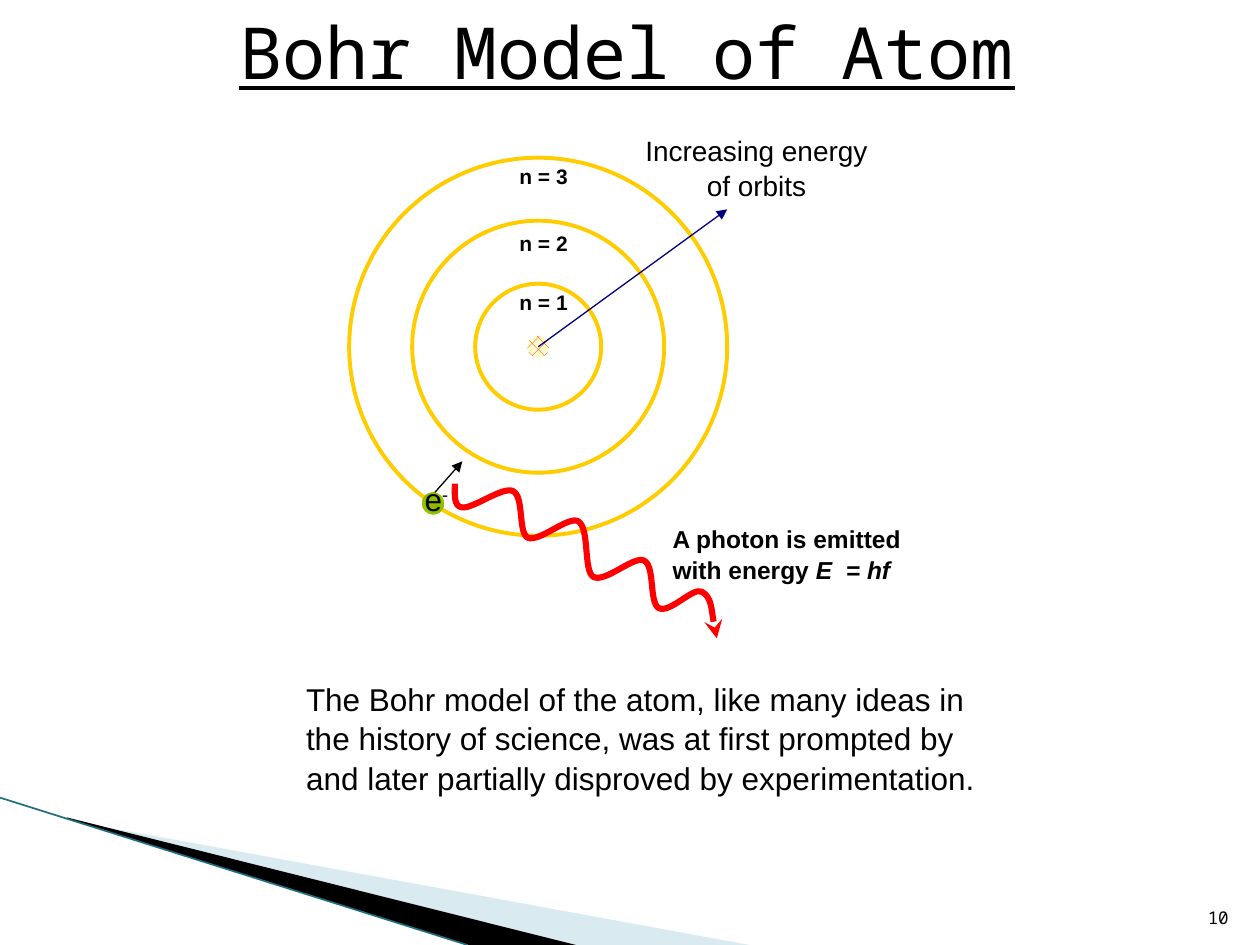
from copy import deepcopy

from lxml.etree import SubElement
from pptx import Presentation
from pptx.dml.color import RGBColor
from pptx.enum.dml import MSO_PATTERN
from pptx.enum.shapes import MSO_CONNECTOR, MSO_SHAPE
from pptx.enum.text import MSO_ANCHOR as Anchor, MSO_AUTO_SIZE as AutoSize, PP_ALIGN as Align
from pptx.oxml.ns import qn
from pptx.util import Cm, Pt

COLORS = {
    "ink": "000000",
    "pale": "A0CBDC",
    "edge": "1F6F80",
    "orbit": "FFCC00",
    "nucleus_dots": "FF0000",
    "nucleus": "FFFFCC",
    "energy": "000080",
    "electron": "99CC00",
    "electron_core": "8BBA00",
    "photon": "FF0000",
}
WAVE = [
    (0, 0.23), (-0.03, 0.46), (0.15, 0.48),
    (0.36, 0.51), (0.97, 0.05), (1.17, 0.15),
    (1.4, 0.25), (1.27, 0.99), (1.47, 1.09),
    (1.7, 1.19), (2.29, 0.64), (2.49, 0.76),
    (2.72, 0.91), (2.59, 1.75), (2.79, 1.88),
    (3.02, 2.01), (3.61, 1.45), (3.81, 1.55),
    (4.04, 1.65), (3.91, 2.39), (4.11, 2.51),
    (4.34, 2.62), (4.8, 2.08), (4.98, 2.18),
    (5.18, 2.29), (5.23, 2.97), (5.28, 3.12),
]


def color(name):
    return RGBColor.from_string(COLORS[name])


def style_span(span, size, font="Arial", bold=None):
    span.font.size = Pt(size)
    span.font.name = font
    span.font.bold = bold
    span.font.color.rgb = color("ink")


def add_text(page, box, lines, size, font="Arial", bold=None, align=Align.LEFT,
             anchor=Anchor.TOP, wrap=True, grow=True):
    label = page.shapes.add_textbox(*map(Cm, box))
    frame = label.text_frame
    frame.text = "\n".join(lines)
    frame.word_wrap = wrap
    frame.auto_size = AutoSize.SHAPE_TO_FIT_TEXT if grow else AutoSize.NONE
    frame.vertical_anchor = anchor
    for para in frame.paragraphs:
        para.alignment = align
        if len(lines) > 1:
            para.line_spacing = 1.05
        for span in para.runs:
            style_span(span, size, font, bold)
    return frame


def add_circle(page, center_x, center_y, radius):
    circle = page.shapes.add_shape(
        MSO_SHAPE.OVAL, Cm(center_x - radius), Cm(center_y - radius),
        Cm(2 * radius), Cm(2 * radius))
    circle.shadow.inherit = False
    return circle


def add_arrowhead(line_shape, kind):
    SubElement(line_shape.line._get_or_add_ln(), qn("a:tailEnd"), type=kind)


def add_line(page, start, end, name, width):
    line = page.shapes.add_connector(MSO_CONNECTOR.STRAIGHT, *map(Cm, (*start, *end)))
    line.line.color.rgb = color(name)
    line.line.width = Pt(width)
    SubElement(line._element.spPr, qn("a:effectLst"))
    return line


def add_outline(page, left, top, points, close):
    spots = [(Cm(left + x), Cm(top + y)) for x, y in points]
    builder = page.shapes.build_freeform(*spots[0])
    builder.add_line_segments(spots[1:], close=close)
    outline = builder.convert_to_shape()
    outline.shadow.inherit = False
    return outline


def draw_backdrop(page, left, top):
    wedges = [
        ("pale", [(1.4, 0.46), (15.11, 2.97), (11.58, 2.97), (1.4, 0.43)]),
        ("ink", [(1.35, 0.4), (11.61, 2.97), (9.45, 2.97), (1.37, 0.43)]),
    ]
    for name, points in wedges:
        wedge = add_outline(page, left, top, points, True)
        wedge.fill.solid()
        wedge.fill.fore_color.rgb = color(name)
        wedge.line.fill.background()
        if name == "pale":
            tint = wedge._element.spPr.find(qn("a:solidFill"))[0]
            SubElement(tint, qn("a:alpha"), val="40000")
    add_line(page, (left, top), (left + 9.42, top + 2.97), "edge", 0.95)


def draw_title(page, box):
    frame = add_text(page, box, ["Bohr Model of Atom"], 41, "Noto Sans Mono",
                     align=Align.CENTER, anchor=Anchor.MIDDLE, grow=False)
    frame.paragraphs[0].runs[0].font.underline = True


def draw_electron(page, center_x, center_y):
    electron = add_circle(page, center_x, center_y, 0.22)
    electron.line.fill.background()
    electron.fill.gradient()
    electron.fill.gradient_angle = 45
    first, last = electron.fill.gradient_stops
    first.color.rgb = last.color.rgb = color("electron_core")
    first.position, last.position = 0.5, 1
    stops = electron._element.spPr.find(qn("a:gradFill")).find(qn("a:gsLst"))
    last.color.rgb = color("electron")
    start = deepcopy(stops[1])
    start.set("pos", "0")
    stops.insert(0, start)


def draw_atom(page, left, top, size):
    center_x, center_y = left + size / 2, top + size / 2
    for level in (1, 2, 3):
        orbit = add_circle(page, center_x, center_y, level * size / 6)
        orbit.fill.background()
        orbit.line.color.rgb = color("orbit")
        orbit.line.width = Pt(2.25)

    nucleus = add_circle(page, center_x, center_y, 0.22)
    nucleus.fill.patterned()
    nucleus.fill.pattern = MSO_PATTERN.PERCENT_30
    nucleus.fill.fore_color.rgb = color("nucleus_dots")
    nucleus.fill.back_color.rgb = color("nucleus")
    nucleus.line.fill.background()

    energy = add_line(page, (center_x, center_y), (center_x + 3.81, center_y - 2.77),
                      "energy", 0.75)
    add_arrowhead(energy, "triangle")
    add_text(page, (left + 5.71, top - 0.64, 5, 1.63), ["Increasing energy", "of orbits"],
             16, align=Align.CENTER, wrap=False)
    for level, offset in ((1, 2.54), (2, 1.34), (3, 0)):
        add_text(page, (left + 3.18, top + offset, 1.5, 0.76), [f"n = {level}"],
                 12, bold=True, wrap=False)

    jump = add_line(page, (left + 1.52, top + 6.98), (left + 2.28, top + 6.12), "ink", 0.75)
    add_arrowhead(jump, "triangle")
    draw_electron(page, left + 1.69, top + 6.97)
    frame = add_text(page, (left + 1.27, top + 6.37, 1.02, 1.02), ["e"], 18, wrap=False)
    charge = frame.paragraphs[0].add_run()
    charge.text = "-"
    style_span(charge, 18)
    charge.font._element.set("baseline", "30000")


def draw_photon(page, left, top):
    wave = add_outline(page, left, top, [(0, 0), *WAVE], False)
    wave.fill.background()
    wave.line.color.rgb = color("photon")
    wave.line.width = Pt(3.5)
    add_arrowhead(wave, "stealth")
    segments = list(wave._element.spPr.iter(qn("a:lnTo")))
    for index in range(0, len(segments), 3):
        curve = SubElement(segments[index].getparent(), qn("a:cubicBezTo"))
        for segment in segments[index:index + 3]:
            curve.append(segment[0])
            segment.getparent().remove(segment)

    frame = add_text(page, (left + 4.14, top + 0.66, 5.13, 1.45),
                     ["A photon is emitted", "with energy "], 14, bold=True, wrap=False)
    formula = frame.paragraphs[1].add_run()
    formula.text = "E  = hf"
    style_span(formula, 14, bold=True)
    formula.font.italic = True


def draw_caption(page, box):
    add_text(page, box, ["The Bohr model of the atom, like many ideas in",
                         "the history of science, was at first prompted by",
                         "and later partially disproved by experimentation."], 18)


def draw_page_number(page, box):
    add_text(page, box, ["10"], 10, "Noto Sans Mono", align=Align.RIGHT,
             anchor=Anchor.BOTTOM, grow=False)


def main():
    deck = Presentation()
    deck.slide_width, deck.slide_height = Cm(25.4), Cm(19.05)
    page = deck.slides.add_slide(deck.slide_layouts[6])
    draw_backdrop(page, 0, 16.08)
    draw_title(page, (0.64, 0, 24, 2.03))
    draw_caption(page, (5.92, 13.54, 14.6, 2.54))
    draw_atom(page, 7.04, 3.18, 7.62)
    draw_photon(page, 9.17, 9.75)
    draw_page_number(page, (23.7, 17.81, 1.32, 1.02))
    deck.save("out.pptx")


if __name__ == "__main__":
    main()
